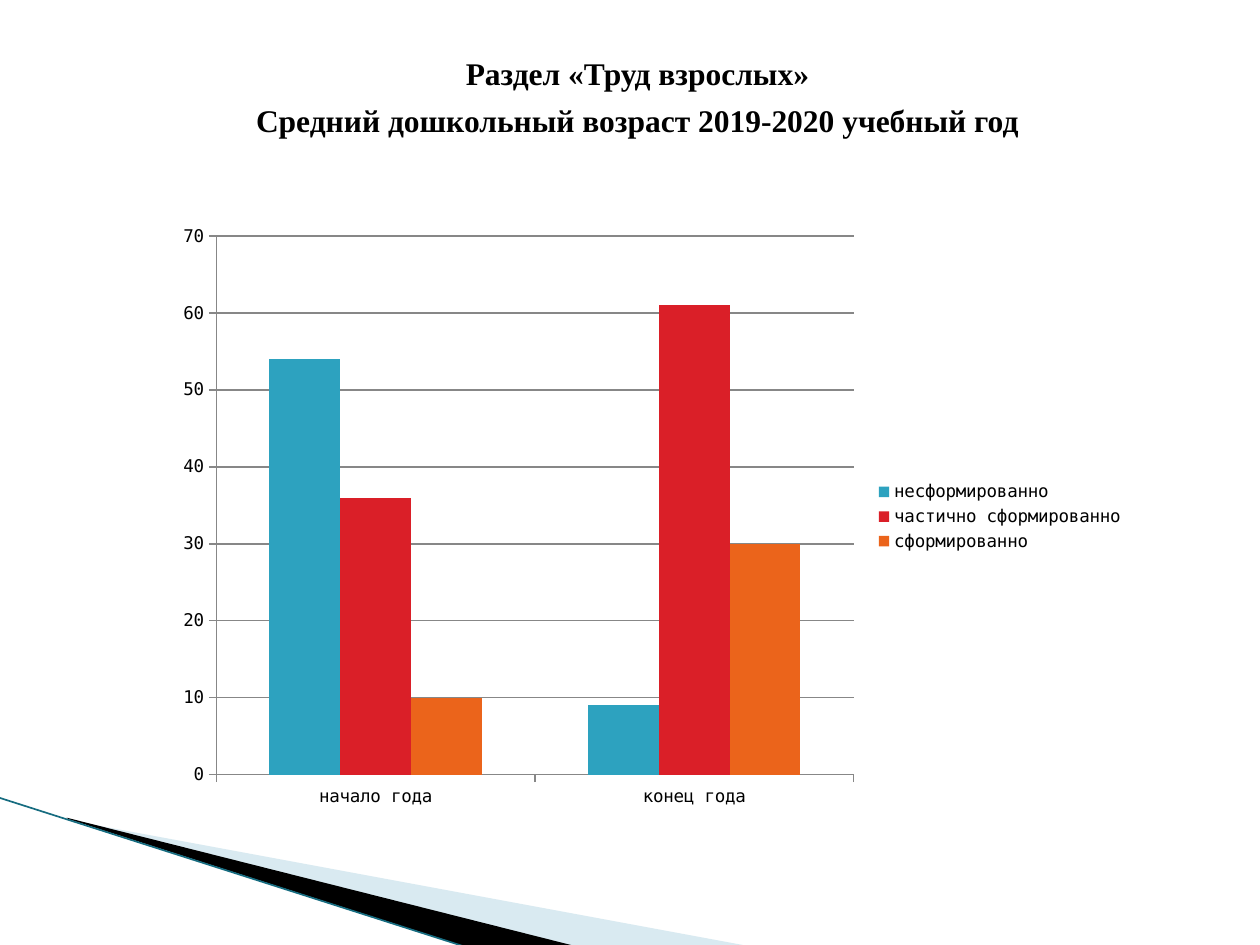
from lxml import etree
from pptx import Presentation
from pptx.chart.data import CategoryChartData
from pptx.dml.color import RGBColor
from pptx.enum.chart import XL_CHART_TYPE, XL_LEGEND_POSITION, XL_TICK_MARK
from pptx.enum.shapes import MSO_CONNECTOR
from pptx.enum.text import PP_ALIGN
from pptx.oxml.ns import qn
from pptx.util import Inches, Pt

BLACK = RGBColor(0x00, 0x00, 0x00)
PALE_BLUE = RGBColor(0xA0, 0xCB, 0xDC)
DARK_TEAL = RGBColor(0x16, 0x6C, 0x80)
GRAY = RGBColor(0x87, 0x87, 0x87)
TEAL = RGBColor(0x2D, 0xA2, 0xBF)
RED = RGBColor(0xDA, 0x1F, 0x28)
ORANGE = RGBColor(0xEB, 0x64, 0x1B)


def add_text(p, text, size=18, font="Times New Roman", color=BLACK, bold=True, before=0):
    p.alignment = PP_ALIGN.CENTER
    p.space_before = Pt(before)
    p._p.get_or_add_pPr().set("marL", str(Inches(0.12)))
    r = p.add_run()
    r.text = text
    r.font.size = Pt(size)
    r.font.name = font
    r.font.color.rgb = color
    r.font.bold = bold


prs = Presentation()
prs.slide_width = Inches(10)
prs.slide_height = Inches(7.5)
s = prs.slides.add_slide(prs.slide_layouts[6])

wedges = [
    (PALE_BLUE, 40, [(0.55, 6.51), (5.95, 7.51), (4.56, 7.51), (0.55, 6.5)]),
    (BLACK, 100, [(0.53, 6.49), (4.57, 7.51), (3.72, 7.52), (0.54, 6.5)]),
]
for color, opacity, points in wedges:
    corners = [(Inches(x), Inches(y)) for x, y in points]
    fb = s.shapes.build_freeform(*corners[0])
    fb.add_line_segments(corners[1:], close=True)
    sp = fb.convert_to_shape()
    sp.shadow.inherit = False
    sp.line.fill.background()
    sp.fill.solid()
    sp.fill.fore_color.rgb = color
    if opacity < 100:
        clr = sp._element.spPr.find(qn("a:solidFill"))[0]
        etree.SubElement(clr, qn("a:alpha")).set("val", str(opacity * 1000))

edge = s.shapes.add_connector(
    MSO_CONNECTOR.STRAIGHT, Inches(-0.01), Inches(6.33), Inches(3.71), Inches(7.52))
edge.line.color.rgb = DARK_TEAL
edge.line.width = Pt(0.95)
etree.SubElement(edge._element.spPr, qn("a:effectLst"))

title = s.shapes.add_textbox(Inches(0.5), Inches(0.38), Inches(9), Inches(0.9))
tf = title.text_frame
tf.word_wrap = True
add_text(tf.paragraphs[0], "Раздел «Труд взрослых»")
add_text(tf.add_paragraph(), "Средний дошкольный возраст 2019-2020 учебный год", before=5)

series = [
    ("несформированно", (54, 9), TEAL),
    ("частично сформированно", (36, 61), RED),
    ("сформированно", (10, 30), ORANGE),
]
data = CategoryChartData()
data.categories = ["начало года", "конец года"]
for name, values, color in series:
    data.add_series(name, values)
chart = s.shapes.add_chart(
    XL_CHART_TYPE.COLUMN_CLUSTERED,
    Inches(1.3), Inches(1.7), Inches(7.72), Inches(4.8), data).chart
chart.has_title = False
chart.font.size = Pt(10)
chart.font.name = "DejaVu Sans Mono"
chart.font.color.rgb = BLACK
chart.has_legend = True
chart.legend.position = XL_LEGEND_POSITION.RIGHT
chart.legend.include_in_layout = False

plot = chart.plots[0]
plot.gap_width = 150
plot.overlap = 0
plot.vary_by_categories = False
for ser, (name, values, color) in zip(plot.series, series):
    ser.format.fill.solid()
    ser.format.fill.fore_color.rgb = color

for axis in (chart.category_axis, chart.value_axis):
    axis.major_tick_mark = XL_TICK_MARK.OUTSIDE
    axis.minor_tick_mark = XL_TICK_MARK.NONE
    axis.format.line.color.rgb = GRAY
chart.value_axis.minimum_scale = 0
chart.value_axis.maximum_scale = 70
chart.value_axis.major_unit = 10
chart.value_axis.has_major_gridlines = True
chart.value_axis.major_gridlines.format.line.color.rgb = GRAY

prs.save("out.pptx")
